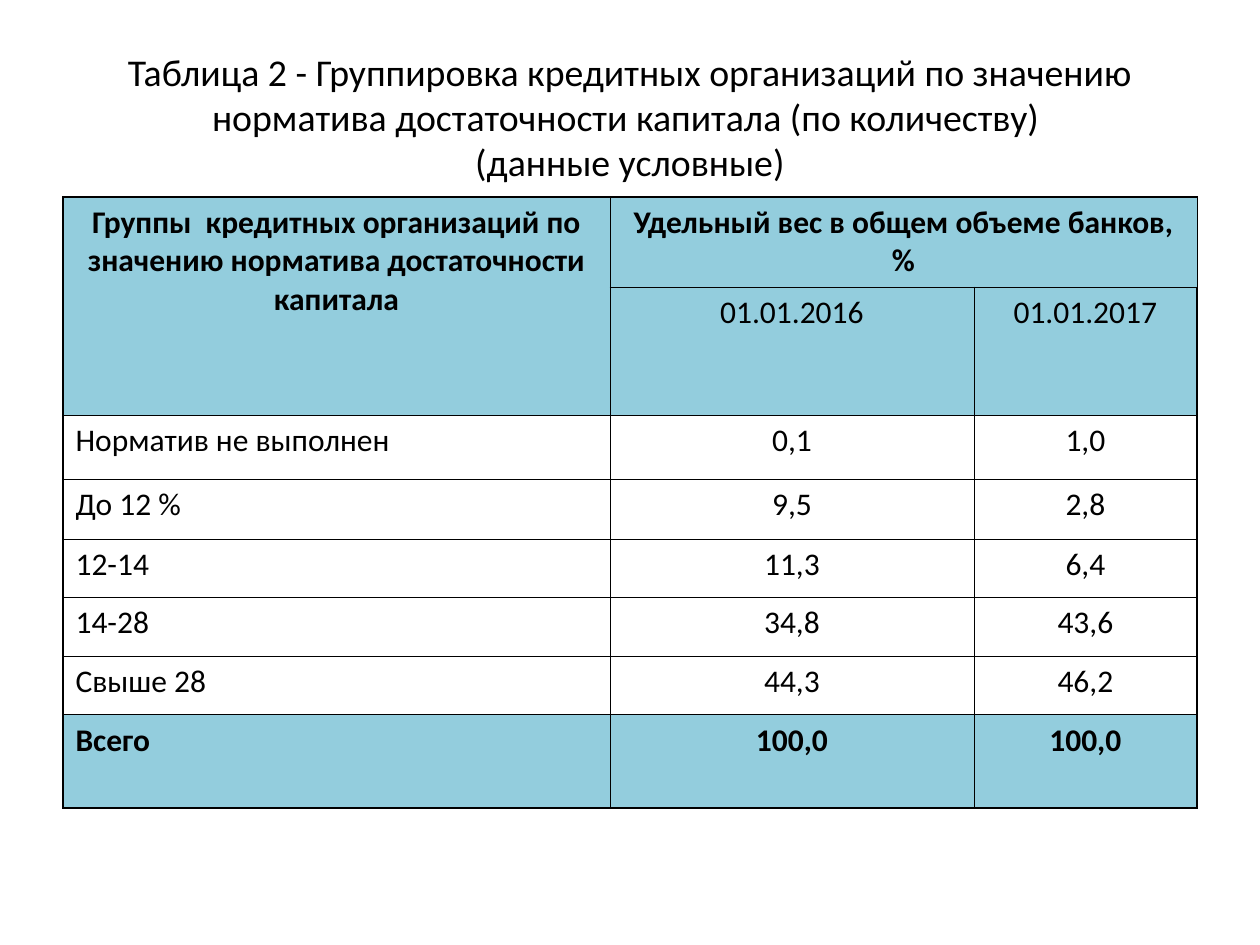
from dataclasses import dataclass

from lxml.etree import SubElement
from pptx import Presentation
from pptx.dml.color import RGBColor
from pptx.enum.text import MSO_ANCHOR, MSO_AUTO_SIZE, PP_ALIGN
from pptx.oxml.ns import qn
from pptx.util import Emu, Pt

PX = 914400 // 126


@dataclass(frozen=True)
class Theme:
    font: str = "Calibri"
    text: str = "000000"
    accent: str = "93CDDD"
    title_size: float = 21.6
    cell_size: float = 18
    outer_line: float = 1
    inner_line: float = 0.5


class SlideBuilder:
    def __init__(self, prs, theme):
        self.theme = theme
        self.s = prs.slides.add_slide(prs.slide_layouts[5])

    def add_run(self, p, text, size, bold=False):
        r = p.add_run()
        r.text = text
        r.font.name = self.theme.font
        r.font.size = Pt(size)
        r.font.bold = bold
        r.font.color.rgb = RGBColor.from_string(self.theme.text)

    def title(self, lines, x, y, w, h):
        sp = self.s.shapes.title
        sp.left, sp.top, sp.width, sp.height = (Emu(v * PX) for v in (x, y, w, h))
        tf = sp.text_frame
        tf.word_wrap = True
        tf.auto_size = MSO_AUTO_SIZE.NONE
        tf.vertical_anchor = MSO_ANCHOR.MIDDLE
        p = tf.paragraphs[0]
        p.alignment = PP_ALIGN.CENTER
        for i, line in enumerate(lines):
            if i:
                p.add_line_break()
            self.add_run(p, line, self.theme.title_size)

    def borders(self, cell, outer):
        """Draw all four sides; those named in outer get the frame's width."""
        tc_pr = cell._tc.get_or_add_tcPr()
        for side in "LRTB":
            width = self.theme.outer_line if side in outer else self.theme.inner_line
            ln = SubElement(tc_pr, qn(f"a:ln{side}"), w=str(Pt(width)))
            fill = SubElement(ln, qn("a:solidFill"))
            SubElement(fill, qn("a:srgbClr"), val=self.theme.text)

    def cell(self, cell, text, outer, centred, bold, shaded):
        self.borders(cell, outer)
        if shaded:
            cell.fill.solid()
            cell.fill.fore_color.rgb = RGBColor.from_string(self.theme.accent)
        else:
            cell.fill.background()
        p = cell.text_frame.paragraphs[0]
        p.alignment = PP_ALIGN.CENTER if centred else PP_ALIGN.LEFT
        if text:
            self.add_run(p, text, self.theme.cell_size, bold)

    def table(self, rows, x, y, widths, heights, merges):
        last_row, last_col = len(rows) - 1, len(widths) - 1
        box = (x, y, sum(widths), sum(heights))
        tbl = self.s.shapes.add_table(
            len(rows), len(widths), *(Emu(v * PX) for v in box)).table
        tbl.first_row = tbl.horz_banding = False
        for col, width in zip(tbl.columns, widths):
            col.width = Emu(width * PX)
        for row, height in zip(tbl.rows, heights):
            row.height = Emu(height * PX)
        for i, row in enumerate(rows):
            for j, text in enumerate(row):
                edges = {"L": j == 0, "R": j == last_col,
                         "T": i == 0, "B": i == last_row}
                self.cell(tbl.cell(i, j), text,
                          outer=[side for side, on in edges.items() if on],
                          centred=j > 0 or i < 2,
                          bold=i in (0, last_row),
                          shaded=i in (0, 1, last_row))
        for first, last in merges:
            tbl.cell(*first).merge(tbl.cell(*last))


TITLE = [
    "Таблица 2 - Группировка кредитных организаций по значению "
    "норматива достаточности капитала (по количеству) ",
    "(данные условные)",
]
ROWS = [
    ("Группы  кредитных организаций по значению норматива достаточности капитала",
     "Удельный вес в общем объеме банков, %", ""),
    ("", "01.01.2016", "01.01.2017"),
    ("Норматив не выполнен", "0,1", "1,0"),
    ("До 12 %", "9,5", "2,8"),
    ("12-14", "11,3", "6,4"),
    ("14-28", "34,8", "43,6"),
    ("Свыше 28", "44,3", "46,2"),
    ("Всего", "100,0", "100,0"),
]


def main():
    prs = Presentation()
    prs.slide_width, prs.slide_height = Emu(1260 * PX), Emu(945 * PX)
    slide = SlideBuilder(prs, Theme())
    slide.title(TITLE, 63, 38, 1134, 157)
    slide.table(ROWS, 63, 197,
                widths=[547, 364, 223],
                heights=[90, 127, 64, 60, 58, 59, 59, 93],
                merges=[((0, 0), (1, 0)), ((0, 1), (0, 2))])
    prs.save("out.pptx")


if __name__ == "__main__":
    main()
